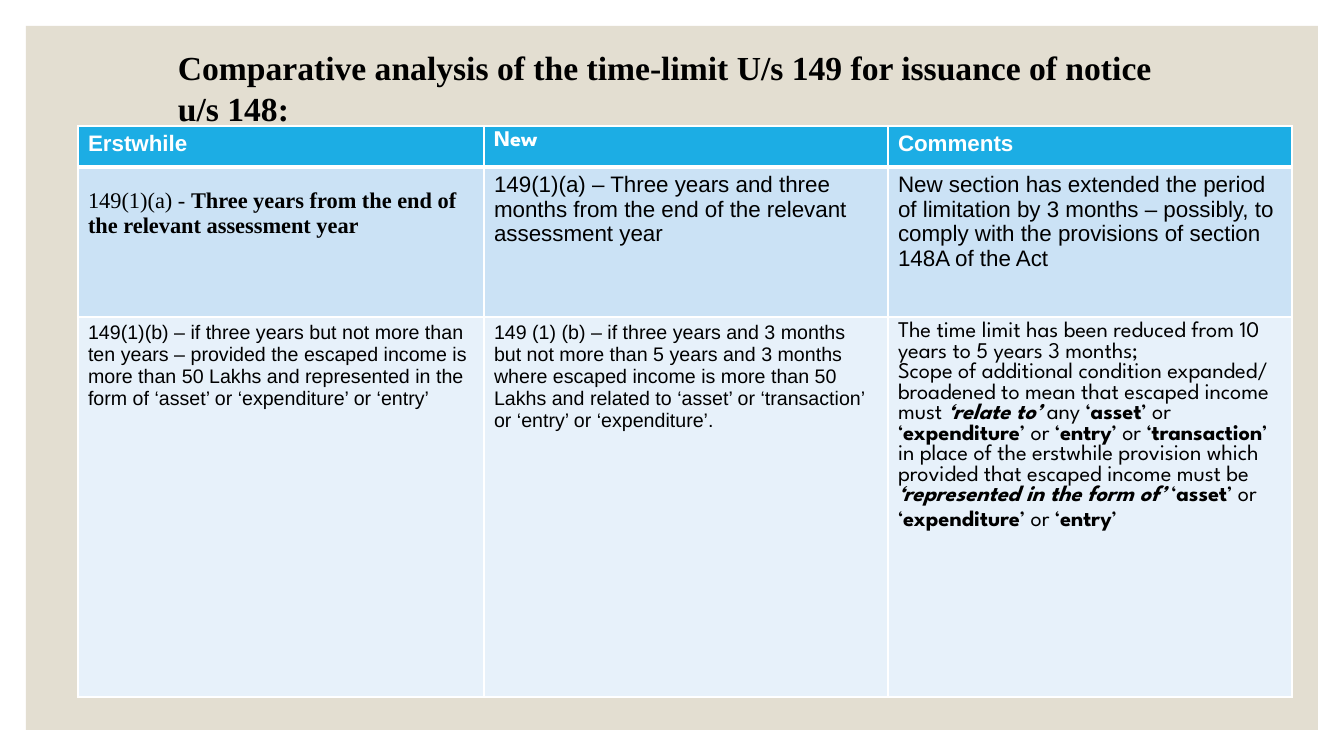
"""Build a slide that compares the old and new time limits for notices."""
from lxml import etree
from pptx import Presentation
from pptx.dml.color import RGBColor
from pptx.enum.shapes import MSO_SHAPE
from pptx.enum.text import MSO_ANCHOR
from pptx.oxml.ns import qn
from pptx.util import Emu, Pt

RECT = MSO_SHAPE.RECTANGLE
MIDDLE = MSO_ANCHOR.MIDDLE
THEME = {
    "sand": "E3DED1", "white": "FFFFFF", "black": "000000",
    "rows": ["1CADE4", "CBE2F5", "E7F1FA"],
    "title": 24, "text": 16, "small": 14, "tail": 20,
    "thin": 0.96, "thick": 3,
    "sans": "Arial", "serif": "Times New Roman", "round": "League Spartan",
}


def px(count):
    return Emu(round(count * 914400 / 100.8))


def write(frame, paras, base):
    for index, runs in enumerate(paras):
        para = frame.paragraphs[0] if index == 0 else frame.add_paragraph()
        for text, extra in runs:
            run = para.add_run()
            run.text = text
            form = base | extra
            run.font.color.rgb = RGBColor.from_string(form.pop("color"))
            for name, value in form.items():
                setattr(run.font, name, value)


body = {"name": THEME["sans"], "size": Pt(THEME["text"]),
        "color": THEME["black"], "bold": False, "italic": False}
bold = {"bold": True}
slant = {"bold": True, "italic": True}
head = body | bold | {"color": THEME["white"]}
small = body | {"size": Pt(THEME["small"])}
serif = body | {"name": THEME["serif"]}
round_face = {"name": THEME["round"]}

deck = Presentation()
deck.slide_width, deck.slide_height = px(1344), px(756)
slide = deck.slides.add_slide(deck.slide_layouts[6])

panel = slide.shapes.add_shape(RECT, px(26), px(26), px(1292), px(704))
panel.shadow.inherit = False
panel.fill.solid()
panel.fill.fore_color.rgb = RGBColor.from_string(THEME["sand"])
panel.line.fill.background()

title = slide.shapes.add_textbox(px(168), px(42), px(1041), px(91)).text_frame
title.word_wrap = True
title.vertical_anchor = MIDDLE
write(title, [[(
    "Comparative analysis of the time-limit U/s 149 for issuance of notice u/s 148:",
    {})]], serif | bold | {"size": Pt(THEME["title"])})

scope = [
    ("Scope of additional condition expanded/ broadened to mean that escaped income must ", {}),
    ("‘relate to’ ", slant), ("any ‘", {}), ("asset", bold),
    ("’ or ‘", {}), ("expenditure", bold), ("’ or ‘", {}), ("entry", bold),
    ("’ or ‘", {}), ("transaction", bold),
    ("’ in place of the erstwhile provision which provided that escaped income must be ", {}),
    ("‘represented in the form of’ ", slant), ("‘", {}), ("asset", bold),
    ("’ or ‘", {}), ("expenditure", bold), ("’ or ‘", {}), ("entry", bold),
    ("’", {}), (" ", {"size": Pt(THEME["tail"])}),
]
cells = [
    [(head, [[("Erstwhile", {})]]),
     (head | round_face, [[("New", {})]]),
     (head, [[("Comments", {})]])],
    [(serif, [[("149(1)(a) - ", {}),
               ("Three years from the end of the relevant assessment year", bold)]]),
     (body, [[("149(1)(a) – Three years and three months from the end of the "
               "relevant assessment year", {})]]),
     (body, [[("New section has extended the period of limitation by 3 months – possibly, "
               "to comply with the provisions of section 148A of the Act", {})]])],
    [(small, [[("149(1)(b) – if three years but not more than ten years – provided the "
                "escaped income is more than 50 Lakhs and represented in the form of "
                "‘asset’ or ‘expenditure’ or ‘entry’", {})]]),
     (small, [[("149 (1) (b) – if three years and 3 months but not more than 5 years and "
                "3 months where escaped income is more than 50 Lakhs and related to ‘asset’ "
                "or ‘transaction’ or ‘entry’ or ‘expenditure’.", {})]]),
     (body | round_face, [
         [("The time limit has been reduced from 10 years to 5 years 3 months;", {})],
         scope])],
]
widths, heights = [406, 404, 404], [41, 150, 380]
table = slide.shapes.add_table(
    3, 3, px(78), px(126), px(sum(widths)), px(sum(heights))).table
for column, width in zip(table.columns, widths):
    column.width = px(width)
for level, (row, height) in enumerate(zip(table.rows, heights)):
    row.height = px(height)
    for cell, (base, paras) in zip(row.cells, cells[level]):
        cell.fill.solid()
        cell.fill.fore_color.rgb = RGBColor.from_string(THEME["rows"][level])
        write(cell.text_frame, paras, base)
        props = cell._tc.get_or_add_tcPr()
        for order, side in enumerate("LRTB"):
            weight = "thick" if (level, side) in [(0, "B"), (1, "T")] else "thin"
            edge = etree.Element(qn("a:ln" + side), w=str(Pt(THEME[weight])))
            paint = etree.SubElement(edge, qn("a:solidFill"))
            etree.SubElement(paint, qn("a:srgbClr"), val=THEME["white"])
            props.insert(order, edge)
table.cell(1, 0).margin_top = px(22)

deck.save("out.pptx")
